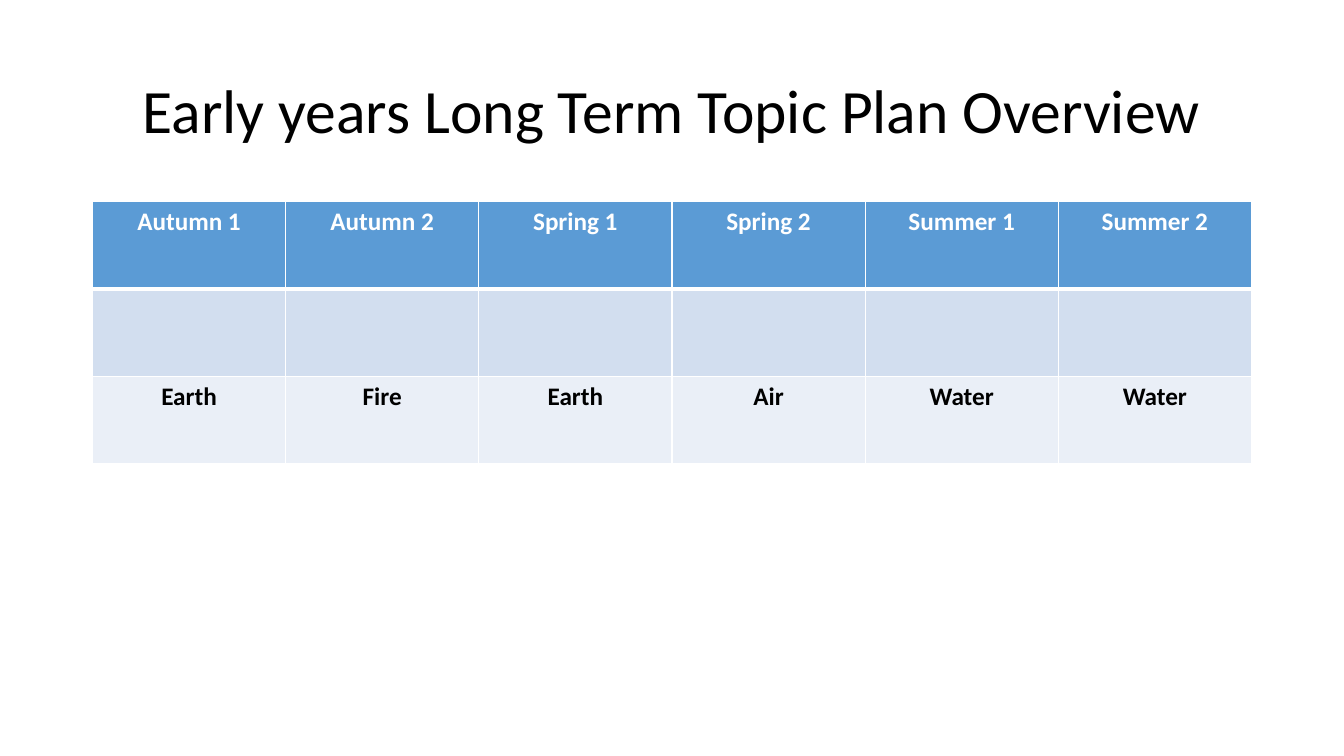
from dataclasses import dataclass

from lxml.etree import SubElement
from pptx import Presentation
from pptx.dml.color import RGBColor as Color
from pptx.enum.text import MSO_ANCHOR as Anchor, PP_ALIGN as Align
from pptx.oxml.ns import qn
from pptx.util import Cm, Pt


@dataclass(frozen=True)
class Theme:
    font: str = "Calibri"
    title_size: int = 44
    cell_size: int = 18
    black: str = "000000"
    white: str = "FFFFFF"
    header: str = "5B9BD5"
    band_dark: str = "D2DEEF"
    band_light: str = "EAEFF7"
    thin: int = 1
    thick: int = 3


theme = Theme()


def write(frame, text, size, color, bold=False, spacing=1.0):
    para = frame.paragraphs[0]
    para.alignment = Align.CENTER
    para.line_spacing = spacing
    span = para.add_run()
    span.text = text
    span.font.name = theme.font
    span.font.size = Pt(size)
    span.font.bold = bold
    span.font.color.rgb = Color.from_string(color)


def set_border(cell, side, width):
    line = SubElement(cell._tc.get_or_add_tcPr(), qn(f"a:ln{side}"), w=str(Pt(width)))
    fill = SubElement(line, qn("a:solidFill"))
    SubElement(fill, qn("a:srgbClr"), val=theme.white)


deck = Presentation()
deck.slide_width, deck.slide_height = Cm(33.87), Cm(19.05)
page = deck.slides.add_slide(deck.slide_layouts[5])
left, width = Cm(2.33), Cm(29.21)

title = page.shapes.title
title.left, title.top, title.width, title.height = left, Cm(1.01), width, Cm(3.68)
title.text_frame.vertical_anchor = Anchor.MIDDLE
write(title.text_frame, "Early years Long Term Topic Plan Overview",
      size=theme.title_size, color=theme.black, spacing=0.9)

terms = ["Autumn 1", "Autumn 2", "Spring 1", "Spring 2", "Summer 1", "Summer 2"]
topics = ["Earth", "Fire", "Earth", "Air", "Water", "Water"]
rows = [
    (terms, theme.header, theme.white),
    ([""] * len(terms), theme.band_dark, theme.black),
    (topics, theme.band_light, theme.black),
]

plan = page.shapes.add_table(len(rows), len(terms), left, Cm(5.08), width, Cm(6.6)).table
for row, (labels, background, color) in enumerate(rows):
    for column, label in enumerate(labels):
        cell = plan.cell(row, column)
        for side in "LRTB":
            header_edge = (row, side) in [(0, "B"), (1, "T")]
            set_border(cell, side, theme.thick if header_edge else theme.thin)
        cell.fill.solid()
        cell.fill.fore_color.rgb = Color.from_string(background)
        if label:
            write(cell.text_frame, label, size=theme.cell_size, color=color, bold=True)

deck.save("out.pptx")
